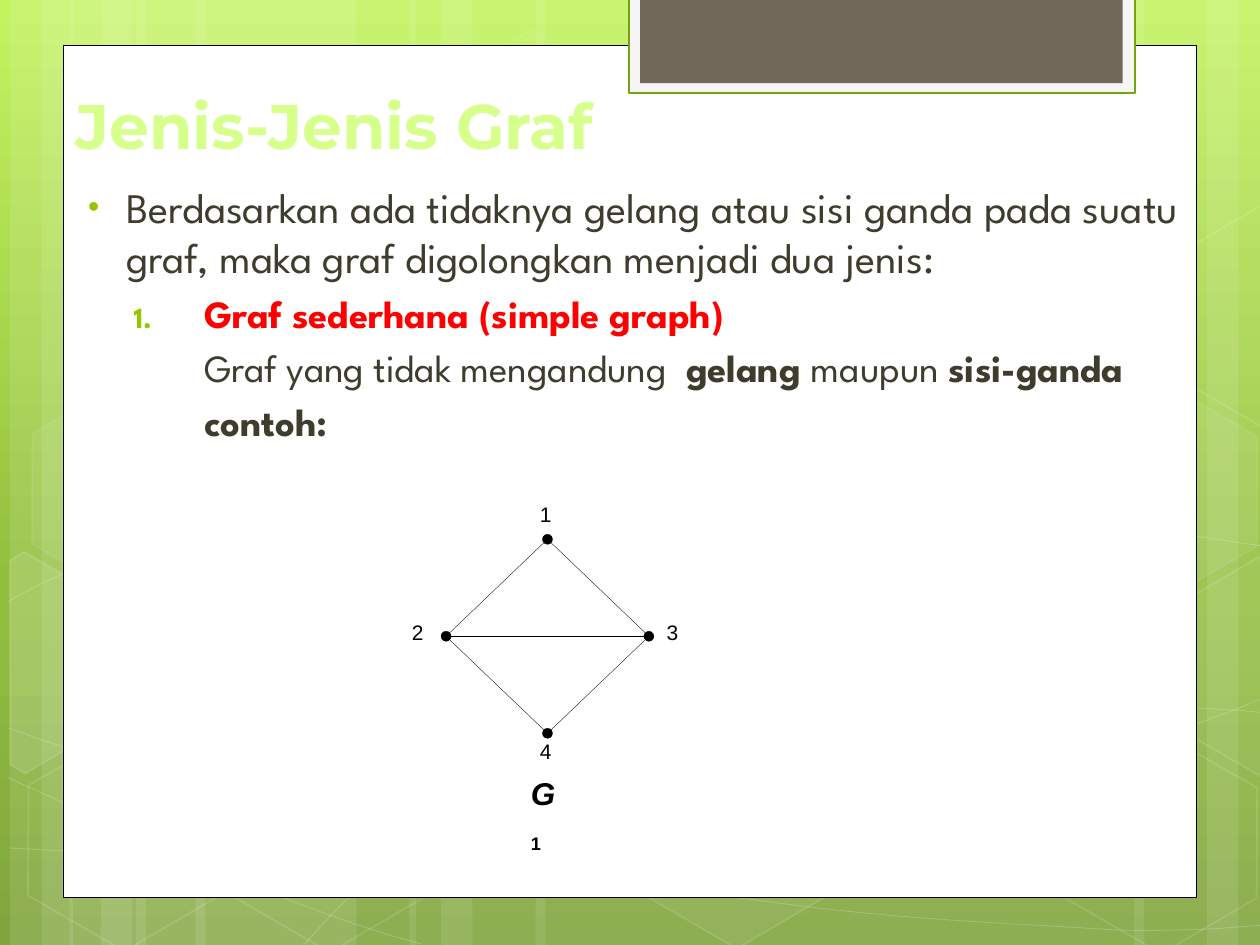
from copy import deepcopy

from lxml import etree
from pptx import Presentation
from pptx.dml.color import RGBColor
from pptx.enum import shapes as kinds, text as txt
from pptx.oxml.ns import qn
from pptx.util import Inches, Pt

WHITE = RGBColor(0xFF, 0xFF, 0xFF)
BLACK = RGBColor(0, 0, 0)
SKY = ((0, RGBColor(0xC3, 0xF3, 0x5F)), (0.62, RGBColor(0x93, 0xBF, 0x3F)),
       (1, RGBColor(0x81, 0xA5, 0x3E)))
PALE = RGBColor(0xF5, 0xF5, 0xF5)
GREEN = RGBColor(0x74, 0xA5, 0x10)
BROWN = RGBColor(0x71, 0x68, 0x5A)
LIME = RGBColor(0xD6, 0xFF, 0x8C)
INK = RGBColor(0x3E, 0x3D, 0x2D)
RED = RGBColor(0xFF, 0, 0)
MARK = "94C600"
KIND = kinds.MSO_SHAPE

STRIPES = ((1.08, 1.75), (0.08, 0.5), (0.33, 0.83), (1.55, 1.75), (0.55, 0.5), (0.8, 0.83),
           (7.33, 1.75), (9.58, 0.5), (9, 0.83), (4.25, 3.08), (3.25, 0.5), (3.5, 0.83))
# Each wave is a start point followed by Bezier control points, three per segment.
WAVES = (
    ((0.07, 6.73), (0.61, 6.76), (1.15, 6.79), (1.9, 6.78), (2.65, 6.77), (3.58, 6.75),
     (4.58, 6.65), (5.58, 6.55), (7, 6.36), (7.92, 6.17), (8.83, 5.98), (9.77, 5.68), (10.07, 5.51)),
    ((0.07, 4.77), (0.36, 4.61), (0.65, 4.46), (1.21, 4.31), (1.78, 4.16), (2.59, 3.94),
     (3.47, 3.87), (4.36, 3.8), (5.44, 3.79), (6.54, 3.87), (7.64, 3.95), (9.47, 4.26), (10.07, 4.34)),
    ((0.06, 6.17), (1.27, 6.72), (2.47, 7.27), (3.34, 7.49)),
    ((0.07, 5.78), (0.38, 5.89), (0.7, 6), (1.28, 6.16), (1.86, 6.31), (2.73, 6.56), (3.57, 6.73),
     (4.4, 6.9), (5.45, 7.08), (6.28, 7.18), (7.11, 7.29), (8, 7.33), (8.53, 7.36),
     (9.05, 7.4), (9.19, 7.38), (9.45, 7.38), (9.71, 7.37), (9.89, 7.35), (10.07, 7.34)),
    ((2.42, 7.49), (2.6, 7.29), (2.78, 7.09), (3.02, 6.91), (3.26, 6.73), (3.6, 6.53), (3.88, 6.39),
     (4.16, 6.25), (4.33, 6.19), (4.7, 6.09), (5.06, 5.99), (5.73, 5.85), (6.08, 5.78),
     (6.44, 5.71), (6.49, 5.71), (6.8, 5.69), (7.11, 5.66), (7.6, 5.63), (7.94, 5.62),
     (8.29, 5.61), (8.86, 5.62), (8.86, 5.62), (9.08, 5.62), (9.31, 5.62), (9.53, 5.62),
     (9.71, 5.63), (9.88, 5.64), (9.97, 5.65), (10.06, 5.66), (10.03, 5.65), (10.06, 5.66)),
)
# left, top, fill opacity, line opacity
HEXES = ((3.34, 0.36, 4, 8), (4.97, 5.89, 6, 12), (0.11, 5.91, 0, 12), (0.14, 3.12, 7, 8),
         (1.74, 5.92, 0, 12), (7.53, 4.53, 10, 12), (8.34, 5.93, 0, 12), (8.34, 3.14, 7, 8))
# fill opacity, corners of hexagons cut by the slide edge
CUTS = ((10, ((0.08, 4.45), (0.19, 4.38), (0.96, 4.82), (0.95, 5.7), (0.2, 6.14), (0.08, 6.07))),
        (4, ((9.26, 4.85), (10.01, 4.41), (10.09, 4.46), (10.09, 6.13), (10.02, 6.17), (9.26, 5.73))),
        (0, ((9.26, 2.07), (10.01, 1.63), (10.1, 1.68), (10.09, 3.35), (10.02, 3.39), (9.26, 2.95))))


def fade(part, color, alpha):
    """Give a fill one colour at an opacity in percent, or none at 0."""
    if not alpha:
        part.background()
        return None
    part.solid()
    part.fore_color.rgb = color
    return alpha


def paint(shape, fill=None, alpha=100, line=None, width=1, clear=100):
    shape.shadow.inherit = False
    props = shape.element.spPr
    jobs = [(shape.fill, fill, alpha, "a:solidFill"), (shape.line.fill, line, clear, "a:ln/a:solidFill")]
    for part, color, level, tag in jobs:
        level = fade(part, color, level if color is not None else 0)
        if level and level < 100:
            tone = props.find("/".join(qn(t) for t in tag.split("/")))[0]
            etree.SubElement(tone, qn("a:alpha")).set("val", str(level * 1000))
    if line is not None:
        shape.line.width = Pt(width)


def block(slide, kind, box, **look):
    shape = slide.shapes.add_shape(kind, *map(Inches, box))
    paint(shape, **look)
    return shape


def trace(slide, dots, closed, **look):
    dots = [(Inches(x), Inches(y)) for x, y in dots]
    pen = slide.shapes.build_freeform(*dots[0])
    pen.add_line_segments(dots[1:], close=closed)
    paint(pen.convert_to_shape(), **look)


def curve(knots, steps=12):
    """Points along a chain of cubic Bezier segments."""
    dots = [knots[0]]
    for i in range(0, len(knots) - 1, 3):
        for n in range(1, steps + 1):
            t = n / steps
            parts = ((1 - t) ** 3, 3 * t * (1 - t) ** 2, 3 * t * t * (1 - t), t ** 3)
            dots.append(tuple(sum(w * p[k] for w, p in zip(parts, knots[i:i + 4])) for k in (0, 1)))
    return dots


def backdrop(slide, high):
    fill = slide.background.fill
    fill.gradient()
    fill.gradient_angle = 270
    stops = slide.element.find(".//" + qn("a:gsLst"))
    stops.append(deepcopy(stops[-1]))
    for stop, (place, color) in zip(fill.gradient_stops, SKY):
        stop.position, stop.color.rgb = place, color
    for left, wide in STRIPES:
        block(slide, KIND.RECTANGLE, (left, 0, wide, high), fill=WHITE, alpha=10)
    for knots in WAVES:
        trace(slide, curve(knots), False, line=WHITE, width=0.5, clear=20)
    for left, top, alpha, clear in HEXES:
        shape = block(slide, KIND.HEXAGON, (left, top, 1.75, 1.52),
                      fill=WHITE, alpha=alpha, line=WHITE, clear=clear)
        shape.adjustments[0] = 0.285
        shape.rotation = 30
    for alpha, dots in CUTS:
        trace(slide, dots, True, fill=WHITE, alpha=alpha, line=WHITE, clear=12)


def frame(slide, box):
    left, top = box[:2]
    block(slide, KIND.RECTANGLE, box, fill=WHITE, line=BLACK, width=0.5)
    block(slide, KIND.RECTANGLE, (left + 4.49, top - 0.38, 4.02, 0.76), fill=PALE, line=GREEN, width=1.25)
    block(slide, KIND.RECTANGLE, (left + 4.58, top - 0.38, 3.83, 0.68), fill=BROWN)


def write(para, words, color, **look):
    run = para.add_run()
    run.text = words
    run.font.color.rgb = color
    for name, value in look.items():
        setattr(run.font, name, value)
    return run


def settle(slide, shape, box):
    """Place a placeholder in front of what is drawn so far."""
    shape.left, shape.top, shape.width, shape.height = map(Inches, box)
    slide.shapes.element.append(shape.element)
    shape.text_frame.auto_size = txt.MSO_AUTO_SIZE.NONE


def heading(slide, box):
    shape = slide.shapes.title
    settle(slide, shape, box)
    shape.text_frame.vertical_anchor = txt.MSO_ANCHOR.BOTTOM
    para = shape.text_frame.paragraphs[0]
    para.alignment = txt.PP_ALIGN.LEFT
    write(para, "Jenis-Jenis Graf", LIME, size=Pt(36), name="Montserrat", bold=True)


def bullet(para, left, hang, tag, **attrs):
    props = para._p.get_or_add_pPr()
    props.set("marL", str(Inches(left)))
    props.set("indent", str(Inches(-hang)))
    if tag != "a:buNone":
        tint = etree.SubElement(props, qn("a:buClr"))
        etree.SubElement(tint, qn("a:srgbClr")).set("val", MARK)
        etree.SubElement(props, qn("a:buSzPct")).set("val", "76000")
    etree.SubElement(props, qn(tag), attrs)


def points(slide, box):
    shape = slide.placeholders[1]
    settle(slide, shape, box)
    frame = shape.text_frame
    none = ("a:buNone", {})
    rows = (
        (0, ("a:buChar", {"char": "•"}),
         [("Berdasarkan ada tidaknya gelang atau sisi ganda pada suatu graf, "
           "maka graf digolongkan menjadi dua jenis:", INK, False)]),
        (1, ("a:buAutoNum", {"type": "arabicPeriod"}), [("Graf sederhana (simple graph)", RED, True)]),
        (1, none, [("\tGraf yang tidak mengandung  ", INK, False), ("gelang ", INK, True),
                   ("maupun ", INK, False), ("sisi-ganda", INK, True)]),
        (1, none, [("\tcontoh:", INK, True)]),
    )
    for i, (level, (tag, attrs), runs) in enumerate(rows):
        para = frame.add_paragraph() if i else frame.paragraphs[0]
        para.level = level
        bullet(para, *((1, 0.56) if level else (0.38, 0.3)), tag, **attrs)
        for words, color, bold in runs:
            write(para, words, color, bold=bold, size=Pt(22 if level else 24), name="League Spartan")


def label(slide, box, words, inset=0, **look):
    area = slide.shapes.add_textbox(*map(Inches, box)).text_frame
    area.word_wrap = True
    if not inset:
        for side in ("left", "top", "right", "bottom"):
            setattr(area, "margin_" + side, 0)
    return write(area.paragraphs[0], words, BLACK, name="Arial", **look), area.paragraphs[0]


def graph(slide, box):
    left, top, wide, high = box
    mid, half = left + wide / 2, top + high / 2
    nodes = {"1": (mid, top), "2": (left, half), "3": (left + wide, half), "4": (mid, top + high)}
    shift = {"1": (-0.06, -0.3), "2": (-0.27, -0.13), "3": (0.14, -0.13), "4": (-0.06, 0.04)}
    for x, y in nodes.values():
        block(slide, KIND.OVAL, (x - 0.04, y - 0.04, 0.08, 0.08), fill=BLACK, line=BLACK, width=0.2)
    for a, b in ("12", "24", "13", "34", "23"):
        ends = map(Inches, nodes[a] + nodes[b])
        edge = slide.shapes.add_connector(kinds.MSO_CONNECTOR.STRAIGHT, *ends)
        edge.line.color.rgb = BLACK
        edge.line.width = Pt(0.2)
        etree.SubElement(edge.element.spPr, qn("a:effectLst"))
    for name, (x, y) in nodes.items():
        dx, dy = shift[name]
        label(slide, (x + dx, y + dy, 0.23, 0.31), name, size=Pt(12))
    spot = (mid - 0.23, top + high + 0.27, 0.44, 0.4)
    look = {"size": Pt(18), "bold": True}
    para = label(slide, spot, "G", inset=1, italic=True, **look)[1]
    sub = write(para, "1", BLACK, name="Arial", italic=False, **look)
    sub.font._element.set("baseline", "-25000")


def main():
    deck = Presentation()
    deck.slide_width, deck.slide_height = Inches(10), Inches(7.5)
    slide = deck.slides.add_slide(deck.slide_layouts[1])
    backdrop(slide, 7.5)
    frame(slide, (0.5, 0.36, 9, 6.76))
    heading(slide, (0.5, 0.84, 7.68, 0.5))
    points(slide, (0.52, 1.39, 9, 5.13))
    graph(slide, (3.54, 4.28, 1.61, 1.54))
    deck.save("out.pptx")


if __name__ == "__main__":
    main()
